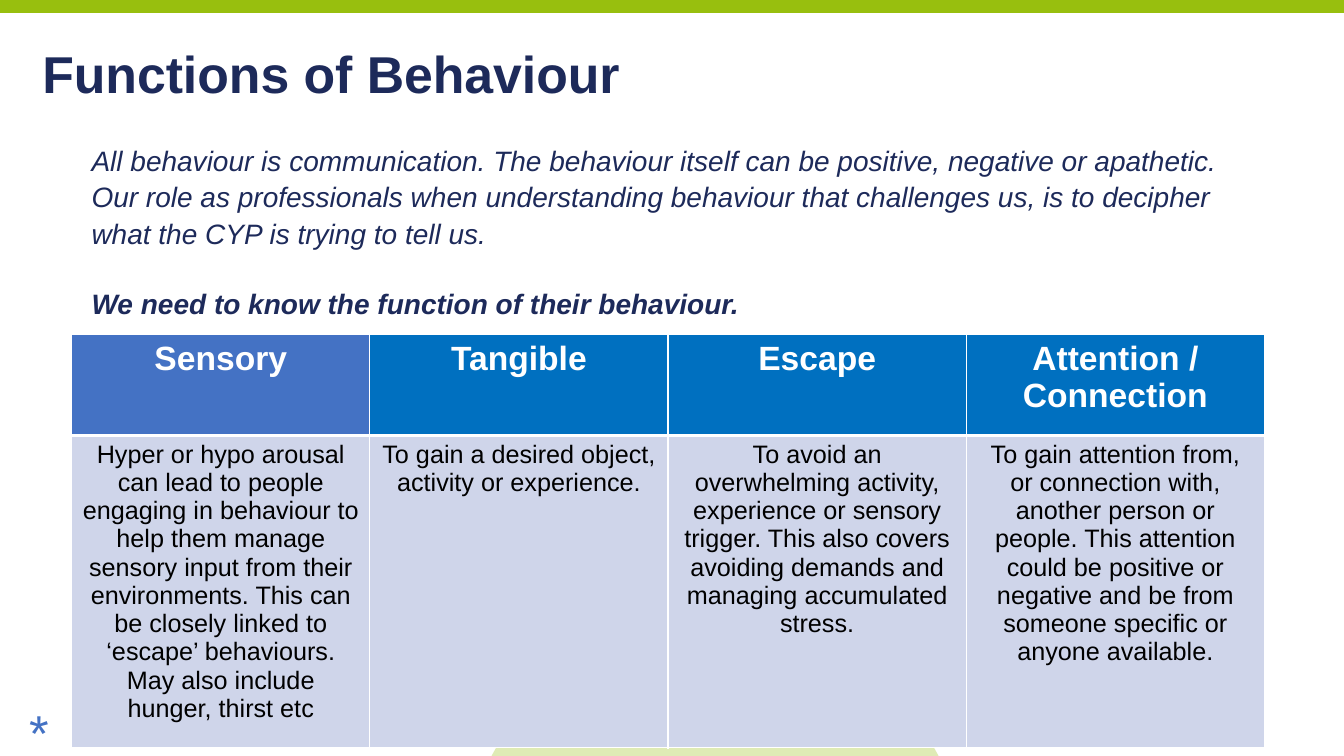
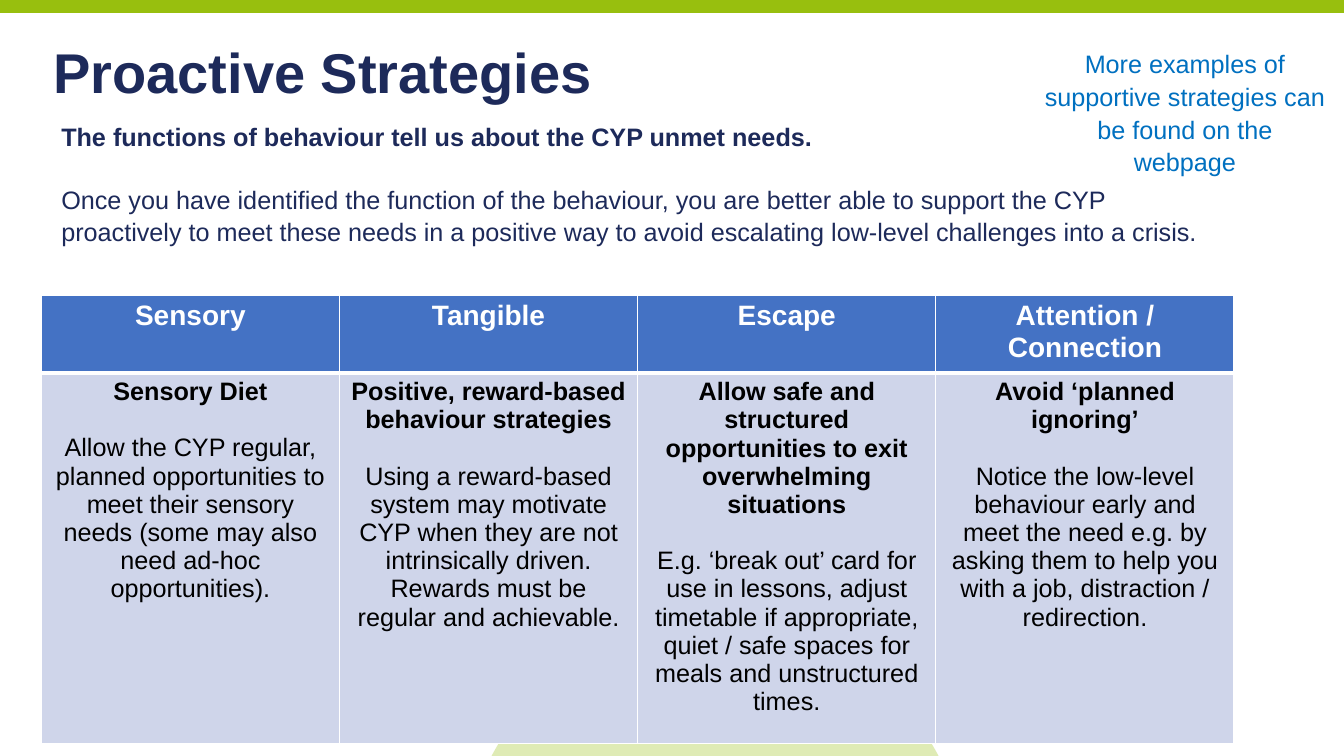
from dataclasses import dataclass

from lxml import etree
from pptx import Presentation
from pptx.dml.color import RGBColor
from pptx.enum.shapes import MSO_SHAPE
from pptx.enum.text import PP_ALIGN
from pptx.oxml.ns import qn
from pptx.util import Pt

RECT, OVAL = MSO_SHAPE.RECTANGLE, MSO_SHAPE.OVAL
LEFT, MID = PP_ALIGN.LEFT, PP_ALIGN.CENTER
WIDE, HIGH = 960, 540


@dataclass(frozen=True)
class Theme:
    font: str = "Arial"
    navy: str = "1D2A5A"
    blue: str = "0070C0"
    royal: str = "4472C4"
    pale: str = "CFD5EA"
    band: str = "98BF0E"
    disc: str = "97BF0D"
    white: str = "FFFFFF"
    black: str = "000000"
    lead: int = 20
    body: int = 18
    star: int = 36
    loose: float = 1.08


@dataclass(frozen=True)
class Part:
    """One paragraph of a single run, with the gap above it in points."""
    text: str
    bold: bool = False
    slant: bool = False
    gap: float = 0


class Deck:
    def __init__(self, theme):
        self.theme = theme
        self.show = Presentation()
        self.show.slide_width, self.show.slide_height = Pt(WIDE), Pt(HIGH)
        self.slide = None

    def start(self):
        """Open a slide with the green band and the pale disc."""
        self.slide = self.show.slides.add_slide(self.show.slide_layouts[6])
        self.shape(RECT, (0, 0, WIDE, 9.2), self.theme.band)
        self.shape(OVAL, (330, 444, 361.5, 361.5), self.theme.disc, 30)

    def shape(self, kind, area, tint, solid=100):
        item = self.slide.shapes.add_shape(kind, *map(Pt, area))
        item.shadow.inherit = False
        item.line.fill.background()
        item.fill.solid()
        item.fill.fore_color.rgb = RGBColor.from_string(tint)
        if solid < 100:
            node = item.element.spPr.find(qn("a:solidFill"))[0]
            etree.SubElement(node, qn("a:alpha"), val=str(solid * 1000))

    def add_parts(self, frame, parts, size, tint, align=LEFT, pitch=None):
        for i, part in enumerate(parts):
            para = frame.add_paragraph() if i else frame.paragraphs[0]
            para.alignment = align
            if pitch:
                para.line_spacing = pitch
            if part.gap:
                para.space_before = Pt(part.gap)
            run = para.add_run()
            run.text = part.text
            font = run.font
            font.name, font.size = self.theme.font, Pt(size)
            font.bold, font.italic = part.bold, part.slant
            font.color.rgb = RGBColor.from_string(tint)

    def text(self, area, parts, size, tint, align=LEFT, pitch=None, inset=None):
        frame = self.slide.shapes.add_textbox(*map(Pt, area)).text_frame
        frame.word_wrap = True
        if inset is not None:
            frame.margin_left = frame.margin_right = Pt(inset)
            frame.margin_top = frame.margin_bottom = Pt(inset)
        self.add_parts(frame, parts, size, tint, align, pitch)

    def title(self, area, words, size):
        self.text(area, [Part(words, bold=True)], size, self.theme.navy,
                  inset=3.6)

    def prose(self, area, parts, size, tint, align=LEFT):
        self.text(area, parts, size, tint, align, self.theme.loose)

    def cell(self, cell, parts, size, tint, fill, rules):
        """Fill a cell; rules gives border widths left, right, top, bottom."""
        props = cell._tc.get_or_add_tcPr()
        for side, width in zip("LRTB", rules):
            line = etree.SubElement(props, qn("a:ln" + side),
                                    w=str(int(Pt(width))))
            paint = etree.SubElement(line, qn("a:solidFill"))
            etree.SubElement(paint, qn("a:srgbClr"), val=self.theme.white)
        cell.fill.solid()
        cell.fill.fore_color.rgb = RGBColor.from_string(fill)
        self.add_parts(cell.text_frame, parts, size, tint, MID)

    def table(self, left, top, rows, cols, size, fills):
        """Draw cols of (head, parts) with the two row heights given."""
        look = self.theme
        step = 213
        grid = self.slide.shapes.add_table(
            2, len(cols), Pt(left), Pt(top),
            Pt(step * len(cols)), Pt(sum(rows))).table
        for row, tall in zip(grid.rows, rows):
            row.height = Pt(tall)
        for i, ((head, parts), fill) in enumerate(zip(cols, fills)):
            grid.columns[i].width = Pt(step)
            self.cell(grid.cell(0, i), [Part(head, bold=True)], size,
                      look.white, fill, (1, 1, 1, 3))
            self.cell(grid.cell(1, i), parts, look.body,
                      look.black, look.pale, (1, 1, 3, 1))


HEADS = ("Sensory", "Tangible", "Escape", "Attention / Connection")

CAUSES = (
    "Hyper or hypo arousal can lead to people engaging in behaviour to help "
    "them manage sensory input from their environments. This can be closely "
    "linked to ‘escape’ behaviours. May also include hunger, thirst etc",
    "To gain a desired object, activity or experience.",
    "To avoid an overwhelming activity, experience or sensory trigger. This "
    "also covers avoiding demands and managing accumulated stress.",
    "To gain attention from, or connection with, another person or people. "
    "This attention could be positive or negative and be from someone "
    "specific or anyone available.",
)

PLANS = (
    ("Sensory Diet",
     "Allow the CYP regular, planned opportunities to meet their sensory "
     "needs (some may also need ad-hoc opportunities)."),
    ("Positive, reward-based behaviour strategies",
     "Using a reward-based system may motivate CYP when they are not "
     "intrinsically driven. Rewards must be regular and achievable."),
    ("Allow safe and structured opportunities to exit overwhelming situations",
     "E.g. ‘break out’ card for use in lessons, adjust timetable if "
     "appropriate, quiet / safe spaces for meals and unstructured times."),
    ("Avoid ‘planned ignoring’",
     "Notice the low-level behaviour early and meet the need e.g. by asking "
     "them to help you with a job, distraction / redirection."),
)


def causes(deck):
    look = deck.theme
    deck.start()
    deck.title((26.6, 26.6, 453, 62.6), "Functions of Behaviour", 37)
    cols = [(head, [Part(text)]) for head, text in zip(HEADS, CAUSES)]
    deck.table(51.2, 239, (72, 209), cols, 24, [look.royal] + [look.blue] * 3)
    deck.prose((58.3, 97.2, 834, 128), [
        Part("All behaviour is communication. The behaviour itself can be "
             "positive, negative or apathetic. Our role as professionals when "
             "understanding behaviour that challenges us, is to decipher what "
             "the CYP is trying to tell us.", slant=True),
        Part("We need to know the function of their behaviour.",
             bold=True, slant=True, gap=24),
    ], look.lead, look.navy)
    deck.text((13.7, 497.5, 480, 42), [Part("*")], look.star, look.royal)


def plans(deck):
    look = deck.theme
    deck.start()
    deck.title((34.6, 23, 812, 78.5), "Proactive Strategies", 40)
    cols = [(head, [Part(lead, bold=True), Part(text, gap=20)])
            for head, (lead, text) in zip(HEADS, PLANS)]
    deck.table(29.5, 211, (54, 249), cols, 20, [look.royal] * 4)
    deck.prose((36.7, 81.4, 844.6, 94.3), [
        Part("The functions of behaviour tell us about the CYP unmet needs.",
             bold=True),
        Part("Once you have identified the function of the behaviour, you are "
             "better able to support the CYP proactively to meet these needs "
             "in a positive way to avoid escalating low-level challenges into "
             "a crisis.", gap=21.6),
    ], look.body, look.navy)
    deck.prose((738, 29.5, 216.7, 72.7), [
        Part("More examples of supportive strategies can be found on the "
             "webpage")], look.body, look.blue, MID)


def main():
    deck = Deck(Theme())
    causes(deck)
    plans(deck)
    deck.show.save("out.pptx")


if __name__ == "__main__":
    main()
